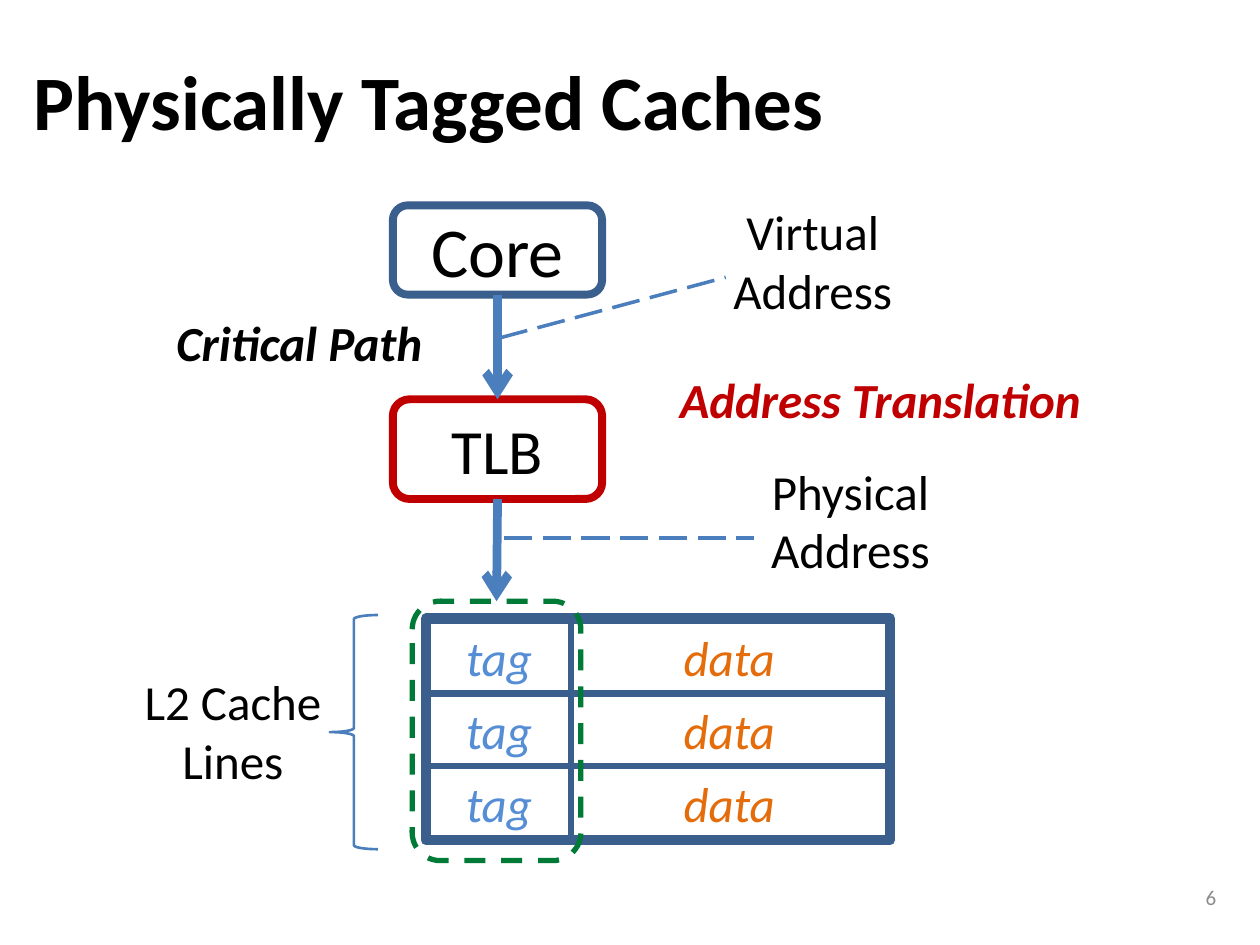
from lxml.etree import SubElement
from pptx import Presentation
from pptx.dml.color import RGBColor
from pptx.enum.dml import MSO_LINE as DASH
from pptx.enum.shapes import MSO_CONNECTOR, MSO_SHAPE as SHAPE
from pptx.enum.text import MSO_ANCHOR as ANCHOR, PP_ALIGN as ALIGN
from pptx.oxml.ns import qn
from pptx.util import Cm, Pt

BLACK = RGBColor(0x00, 0x00, 0x00)
GRAY = RGBColor(0x8C, 0x8C, 0x8C)
NAVY = RGBColor(0x3A, 0x5F, 0x8C)
BLUE = RGBColor(0x4B, 0x7E, 0xBC)
TAG_BLUE = RGBColor(0x55, 0x8E, 0xD5)
ORANGE = RGBColor(0xE4, 0x6C, 0x0A)
RED = RGBColor(0xC0, 0x00, 0x00)
GREEN = RGBColor(0x00, 0x7A, 0x37)

prs = Presentation()
prs.slide_width, prs.slide_height = Cm(25.4), Cm(19.05)
s = prs.slides.add_slide(prs.slide_layouts[6])


def add_text(sp, lines, size, color=BLACK, bold=False, italic=False,
             align=ALIGN.CENTER, anchor=ANCHOR.MIDDLE):
    tf = sp.text_frame
    tf.word_wrap = True
    tf.vertical_anchor = anchor
    for i, line in enumerate(lines):
        p = tf.paragraphs[0] if i == 0 else tf.add_paragraph()
        p.alignment = align
        r = p.add_run()
        r.text = line
        r.font.name, r.font.size = "Calibri", Pt(size)
        r.font.bold, r.font.italic = bold, italic
        r.font.color.rgb = color


def add_outline(kind, x, y, w, h, color, weight):
    sp = s.shapes.add_shape(kind, Cm(x), Cm(y), Cm(w), Cm(h))
    sp.shadow.inherit = False
    sp.fill.background()
    sp.line.color.rgb = color
    sp.line.width = Pt(weight)
    return sp


# Title and slide number
sp = s.shapes.add_textbox(Cm(0.43), Cm(0.43), Cm(22.86), Cm(3.18))
add_text(sp, ["Physically Tagged Caches"], 44, bold=True, align=ALIGN.LEFT)
sp = s.shapes.add_textbox(Cm(18.85), Cm(17.58), Cm(5.92), Cm(1.02))
add_text(sp, ["6"], 12, GRAY, align=ALIGN.RIGHT)

# Core and TLB
core = add_outline(SHAPE.ROUNDED_RECTANGLE, 7.92, 4.14, 4.22, 1.8, NAVY, 4.5)
add_text(core, ["Core"], 40)
tlb = add_outline(SHAPE.ROUNDED_RECTANGLE, 7.92, 8.05, 4.22, 2.01, RED, 4.5)
add_text(tlb, ["TLB"], 36)

# Cache lines: a tag and a data cell in each row
add_outline(SHAPE.RECTANGLE, 8.59, 12.47, 9.35, 4.47, NAVY, 6)
for label, x, w, color in [("tag", 8.6, 2.92, TAG_BLUE),
                           ("data", 11.51, 6.38, ORANGE)]:
    for row in range(3):
        cell = add_outline(SHAPE.RECTANGLE, x, 12.52 + 1.47 * row, w, 1.45, NAVY, 3)
        add_text(cell, [label], 28, color, italic=True)

# Highlight around the tags, brace beside the lines
tags = add_outline(SHAPE.ROUNDED_RECTANGLE, 8.31, 12.12, 3.4, 5.23, GREEN, 3)
tags.line.dash_style = DASH.DASH
add_outline(SHAPE.LEFT_BRACE, 6.65, 12.4, 0.97, 4.72, BLUE, 1.5)

# Labels
for lines, x, y, w, h, color, strong in [
    (["Virtual", "Address"], 13.87, 3.94, 5.03, 2.64, BLACK, False),
    (["Physical Address"], 14.63, 9.17, 5.03, 2.64, BLACK, False),
    (["L2 Cache", "Lines"], 2.18, 13.41, 5.03, 2.64, BLACK, False),
    (["Critical Path"], 1.27, 6.17, 9.53, 1.45, BLACK, True),
    (["Address Translation"], 12.12, 7.32, 11.25, 1.45, RED, True),
]:
    sp = s.shapes.add_textbox(Cm(x), Cm(y), Cm(w), Cm(h))
    add_text(sp, lines, 28, color, strong, strong, anchor=ANCHOR.TOP)

# Arrows down the critical path, dashed leaders to the address labels
for x1, y1, x2, y2, ends in [
    (10.03, 5.94, 10.03, 8.05, (core, tlb)),
    (10.03, 10.06, 10.01, 12.12, (tlb, tags)),
    (10.08, 6.81, 14.63, 5.59, None),
    (10.16, 10.85, 15.19, 10.85, None),
]:
    line = s.shapes.add_connector(MSO_CONNECTOR.STRAIGHT, Cm(x1), Cm(y1), Cm(x2), Cm(y2))
    line.line.color.rgb = BLUE
    line.line.width = Pt(5 if ends else 2)
    if ends:
        line.begin_connect(ends[0], 2)
        line.end_connect(ends[1], 0)
        SubElement(line.line._get_or_add_ln(), qn("a:tailEnd"), type="arrow")
    else:
        line.line.dash_style = DASH.LONG_DASH
    SubElement(line._element.spPr, qn("a:effectLst"))

prs.save("out.pptx")
